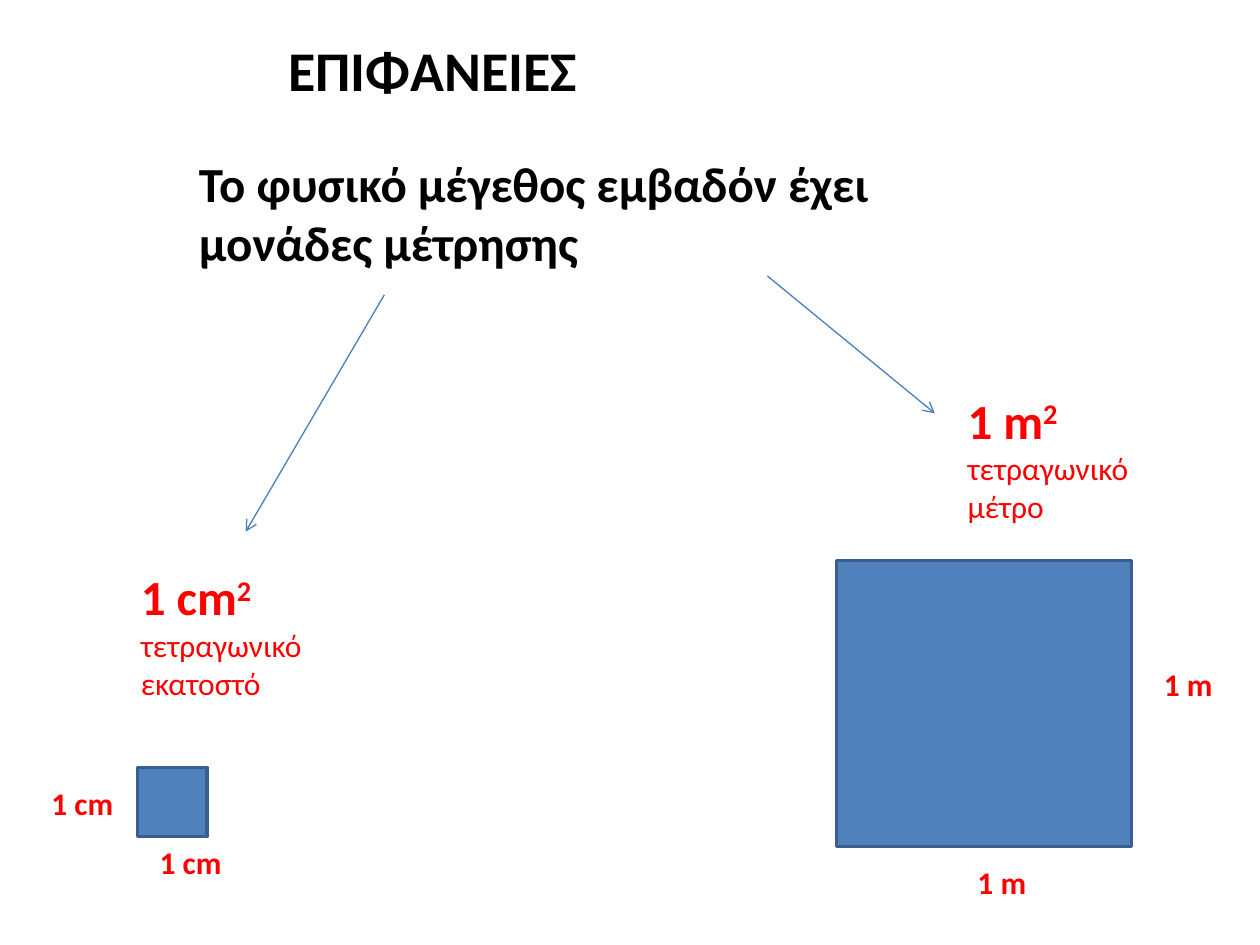
from lxml.etree import SubElement
from pptx import Presentation
from pptx.dml.color import RGBColor
from pptx.enum.shapes import MSO_CONNECTOR as CONN, MSO_SHAPE as SHAPE
from pptx.enum.text import MSO_ANCHOR as ANCHOR, MSO_AUTO_SIZE as AUTO, PP_ALIGN as ALIGN
from pptx.oxml.ns import qn
from pptx.util import Pt

BLACK = RGBColor(0x00, 0x00, 0x00)
RED = RGBColor(0xFF, 0x00, 0x00)
BLUE = RGBColor(0x4F, 0x81, 0xBD)
EDGE = RGBColor(0x3A, 0x5F, 0x8C)
ARROW = RGBColor(0x4B, 0x7E, 0xBC)


def add_run(p, text, size=18, color=RED, bold=True, raised=False):
    r = p.add_run()
    r.text = text
    r.font.name = "Calibri"
    r.font.size = Pt(size)
    r.font.bold = bold
    r.font.color.rgb = color
    if raised:
        r.font._element.set("baseline", "30000")


class SlideBuilder:
    def __init__(self, prs):
        self.s = prs.slides.add_slide(prs.slide_layouts[5])

    def _paragraph(self, sp, auto_size):
        tf = sp.text_frame
        tf.word_wrap = True
        tf.auto_size = auto_size
        tf.vertical_anchor = ANCHOR.TOP
        p = tf.paragraphs[0]
        p.alignment = ALIGN.LEFT
        return p

    def title(self, text, x, y, w, h):
        sp = self.s.shapes.title
        sp.left, sp.top, sp.width, sp.height = Pt(x), Pt(y), Pt(w), Pt(h)
        add_run(self._paragraph(sp, AUTO.NONE), text, size=32, color=BLACK)

    def text(self, x, y, w, h):
        sp = self.s.shapes.add_textbox(Pt(x), Pt(y), Pt(w), Pt(h))
        return self._paragraph(sp, AUTO.SHAPE_TO_FIT_TEXT)

    def unit(self, symbol, name, x, y, w):
        p = self.text(x, y, w, 85)
        add_run(p, symbol, size=28)
        add_run(p, "2 ", size=28, raised=True)
        add_run(p, name, bold=False)

    def side_label(self, text, x, y, w):
        add_run(self.text(x, y, w, 29), text)

    def square(self, x, y, w, h):
        sp = self.s.shapes.add_shape(SHAPE.RECTANGLE, Pt(x), Pt(y), Pt(w), Pt(h))
        sp.shadow.inherit = False
        sp.fill.solid()
        sp.fill.fore_color.rgb = BLUE
        sp.line.color.rgb = EDGE
        sp.line.width = Pt(2)

    def arrow(self, x1, y1, x2, y2):
        line = self.s.shapes.add_connector(CONN.STRAIGHT, Pt(x1), Pt(y1), Pt(x2), Pt(y2))
        line.line.color.rgb = ARROW
        line.line.width = Pt(0.75)
        SubElement(line.line._get_or_add_ln(), qn("a:tailEnd"), type="arrow")
        SubElement(line._element.spPr, qn("a:effectLst"))


def main():
    prs = Presentation()
    prs.slide_width, prs.slide_height = Pt(720), Pt(540)
    b = SlideBuilder(prs)

    # Heading and statement
    b.title("ΕΠΙΦΑΝΕΙΕΣ", 157.5, 16.6, 253.4, 46)
    add_run(b.text(106.6, 84.2, 478, 75),
            "Το φυσικό μέγεθος εμβαδόν έχει μονάδες μέτρησης", size=28, color=BLACK)

    # Square centimetre
    b.unit("1 cm", "τετραγωνικό εκατοστό", 73.4, 320.4, 163.4)
    b.side_label("1 cm", 84.2, 478, 67.7)
    b.square(78.7, 438.5, 39.6, 39.6)
    b.side_label("1 cm", 22.3, 444.2, 50.4)
    b.arrow(219.6, 168.5, 140.4, 303.8)

    # Square metre
    b.unit("1 m", "τετραγωνικό μέτρο", 545.8, 219.6, 112.3)
    b.side_label("1 m", 551.5, 489.6, 67.7)
    b.square(478, 320.4, 168.5, 163.4)
    b.side_label("1 m", 658, 376.6, 50.4)
    b.arrow(438.5, 157.7, 534.2, 236.2)

    prs.save("out.pptx")


if __name__ == "__main__":
    main()
